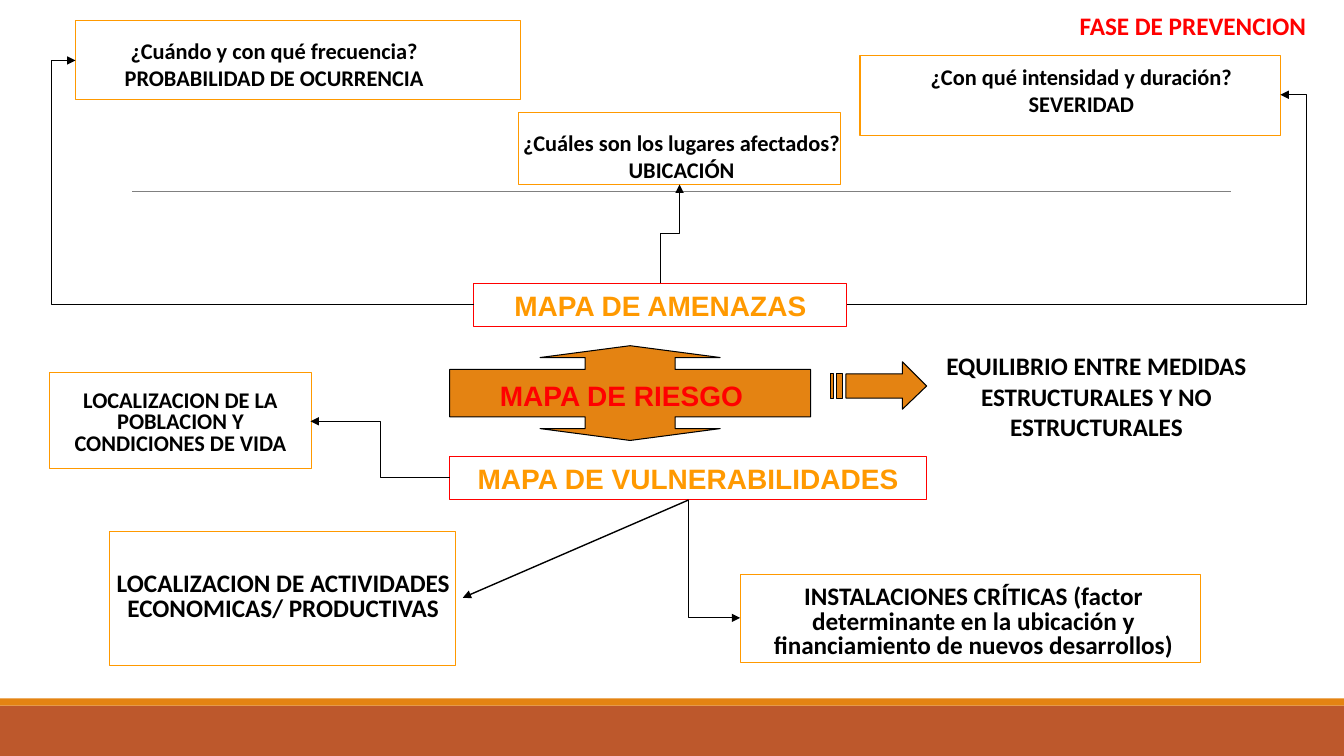
from pptx import Presentation
from pptx.dml.color import RGBColor as Rgb
from pptx.enum.shapes import MSO_CONNECTOR as Link, MSO_SHAPE as Form
from pptx.enum.text import MSO_AUTO_SIZE as Fit, PP_ALIGN as Align
from pptx.oxml import parse_xml
from pptx.oxml.ns import nsdecls, qn
from pptx.util import Pt

PX = 9144
WIDE, HIGH = 1333, 750
INK = {"black": "000000", "red": "FF0000", "amber": "FF9900", "fill": "E48312",
       "rust": "BD582C", "gray": "808080"}
HEAD = {"name": "Arial", "size": Pt(20), "bold": True}
BODY = {"name": "Calibri", "size": Pt(18), "bold": True}
SMALL = {**BODY, "size": Pt(16)}
TIGHT = {"line_spacing": 0.8}


def tint(part, name):
    """Give a fill or font colour holder a solid colour."""
    part.solid()
    part.fore_color.rgb = Rgb.from_string(INK[name])


def style(shape, fill=None, line=None):
    """Set fill and outline of a shape, leaving out what is not named."""
    shape.shadow.inherit = False
    if fill:
        tint(shape.fill, fill)
    else:
        shape.fill.background()
    if line:
        tint(shape.line.fill, line)
        shape.line.width = Pt(0.75)
    else:
        shape.line.fill.background()


def block(slide, box, fill=None, line=None, form=Form.RECTANGLE):
    """Add a preset shape in a box."""
    shape = slide.shapes.add_shape(form, *(v * PX for v in box))
    style(shape, fill, line)
    return shape


def write(frame, lines, font, ink="black", wrap=True, para=None):
    """Write paragraphs into a text frame."""
    frame.word_wrap = wrap
    frame.auto_size = Fit.SHAPE_TO_FIT_TEXT
    for n, line in enumerate(lines):
        item = frame.add_paragraph() if n else frame.paragraphs[0]
        item.text = line
        for key, val in {"alignment": Align.CENTER, **(para or {})}.items():
            setattr(item, key, val)
        for key, val in font.items():
            setattr(item.font, key, val)
        tint(item.font.fill, ink)


def label(slide, box, lines, font, **opts):
    """Add a text box."""
    text = slide.shapes.add_textbox(*(v * PX for v in box))
    write(text.text_frame, lines, font, **opts)


def hub(slide, box, text):
    """Add a red-edged map title."""
    write(block(slide, box, line="red").text_frame, [text], HEAD, "amber")


def wire(slide, ends, kind=Link.STRAIGHT, ink="black", width=0.75, tip=True):
    """Add a connector between two points."""
    line = slide.shapes.add_connector(kind, *(int(v * PX) for v in ends))
    tint(line.line.fill, ink)
    line.line.width = Pt(width)
    prop = line._element.spPr
    if tip:
        prop.find(qn("a:ln")).append(
            parse_xml(f'<a:tailEnd {nsdecls("a")} type="triangle"/>'))
    prop.append(parse_xml(f'<a:effectLst {nsdecls("a")}/>'))
    return prop


def bend(slide, ends, turn=0.5):
    """Add an elbow that leaves sideways and turns at a share of its width."""
    geom = wire(slide, ends, Link.ELBOW).find(qn("a:prstGeom"))
    geom.find(qn("a:avLst")).append(parse_xml(
        f'<a:gd {nsdecls("a")} name="adj1" fmla="val {round(turn * 100000)}"/>'))


def rise(slide, ends, once=False):
    """Add an elbow that leaves up or down and ends to the right."""
    x1, y1, x2, y2 = ends
    mid, cen = (x1 + x2) / 2, (y1 + y2) / 2
    half, tall = (x2 - x1) / 2, (y2 - y1) / 2
    prop = wire(slide, (mid + tall, cen - half, mid - tall, cen + half), Link.ELBOW)
    prop.find(qn("a:xfrm")).set("rot", str(270 * 60000))
    if once:
        prop.find(qn("a:prstGeom")).set("prst", "bentConnector2")


def base(slide, x, y, wide, high):
    """Draw the band along the foot of the slide."""
    block(slide, (x, y + 7, wide, high - 7), "rust")
    block(slide, (x, y, wide, 7), "fill")


def threats(slide, x, y):
    """Draw the threat map and its three questions."""
    wire(slide, (x + 81, y + 185, x + 1171, y + 185), ink="gray", width=0.5, tip=False)
    label(slide, (x + 1011, y, 247, 40), ["FASE DE PREVENCION"], BODY,
          ink="red", wrap=False, para={"alignment": Align.LEFT})
    asks = [
        ((25, 15, 441, 79), (59, 27, 326, 64),
         ["¿Cuándo y con qué frecuencia?", "PROBABILIDAD DE OCURRENCIA"]),
        ((464, 107, 320, 71), (457, 118, 338, 64),
         ["¿Cuáles son los lugares afectados?", "UBICACIÓN"]),
        ((803, 50, 417, 79), (861, 53, 323, 64),
         ["¿Con qué intensidad y duración?", "SEVERIDAD"]),
    ]
    for (fx, fy, fw, fh), (tx, ty, tw, th), lines in asks:
        block(slide, (x + fx, y + fy, fw, fh), line="amber")
        label(slide, (x + tx, y + ty, tw, th), lines, SMALL, wrap=False)
    hub(slide, (x + 420, y + 276, 370, 43), "MAPA DE AMENAZAS")
    bend(slide, (x + 420, y + 297, x + 25, y + 55), 1.06)
    bend(slide, (x + 790, y + 297, x + 1220, y + 89), 1.06)
    rise(slide, (x + 605, y + 276, x + 624, y + 178))


def arrow(slide, x, y):
    """Draw the striped arrow."""
    pen = slide.shapes.build_freeform(x + 71, y, scale=PX)
    tip = [(71, 12), (15, 12), (15, 36), (71, 36), (71, 47), (95, 24)]
    pen.add_line_segments([(x + a, y + b) for a, b in tip], close=True)
    for left, right in ((6, 12), (0, 3)):
        pen.move_to(x + left, y + 12)
        bar = [(left, 36), (right, 36), (right, 12)]
        pen.add_line_segments([(x + a, y + b) for a, b in bar], close=True)
    style(pen.convert_to_shape(), "fill", "black")


def risk(slide, x, y):
    """Draw the risk map and the balance it leads to."""
    call = block(slide, (x, y, 358, 94), "fill", "black", Form.UP_DOWN_ARROW_CALLOUT)
    for n, val in enumerate((0.95, 0.95, 0.125, 0.5)):
        call.adjustments[n] = val
    label(slide, (x + 40, y + 28, 323, 43), ["MAPA DE RIESGO"], HEAD,
          ink="red", para={"alignment": Align.LEFT})
    arrow(slide, x + 378, y + 16)
    label(slide, (x + 433, y, 417, 101),
          ["EQUILIBRIO ENTRE MEDIDAS ESTRUCTURALES Y NO ESTRUCTURALES"], BODY)


def weak(slide, x, y):
    """Draw the vulnerability map and its three topics."""
    topics = [
        ((4, 0, 260, 95), (0, 13, 268, 75), SMALL,
         "LOCALIZACION DE LA POBLACION Y CONDICIONES DE VIDA"),
        ((64, 157, 343, 133), (58, 194, 356, 59), BODY,
         "LOCALIZACION DE ACTIVIDADES ECONOMICAS/ PRODUCTIVAS"),
        ((689, 200, 457, 87), (696, 207, 449, 83), BODY,
         "INSTALACIONES CRÍTICAS (factor determinante en la ubicación y "
         "financiamiento de nuevos desarrollos)"),
    ]
    for (fx, fy, fw, fh), (tx, ty, tw, th), font, text in topics:
        block(slide, (x + fx, y + fy, fw, fh), line="amber")
        label(slide, (x + tx, y + ty, tw, th), [text], font, para=TIGHT)
    hub(slide, (x + 401, y + 83, 473, 43), "MAPA DE VULNERABILIDADES")
    bend(slide, (x + 401, y + 104, x + 263, y + 48))
    rise(slide, (x + 638, y + 126, x + 689, y + 243), once=True)
    wire(slide, (x + 638, y + 126, x + 414, y + 223), width=1)


def main():
    """Build and save the slide."""
    deck = Presentation()
    deck.slide_width, deck.slide_height = WIDE * PX, HIGH * PX
    slide = deck.slides.add_slide(deck.slide_layouts[6])
    base(slide, 0, 693, WIDE, HIGH - 693)
    threats(slide, 50, 5)
    risk(slide, 446, 343)
    weak(slide, 45, 370)
    deck.save("out.pptx")


if __name__ == "__main__":
    main()
